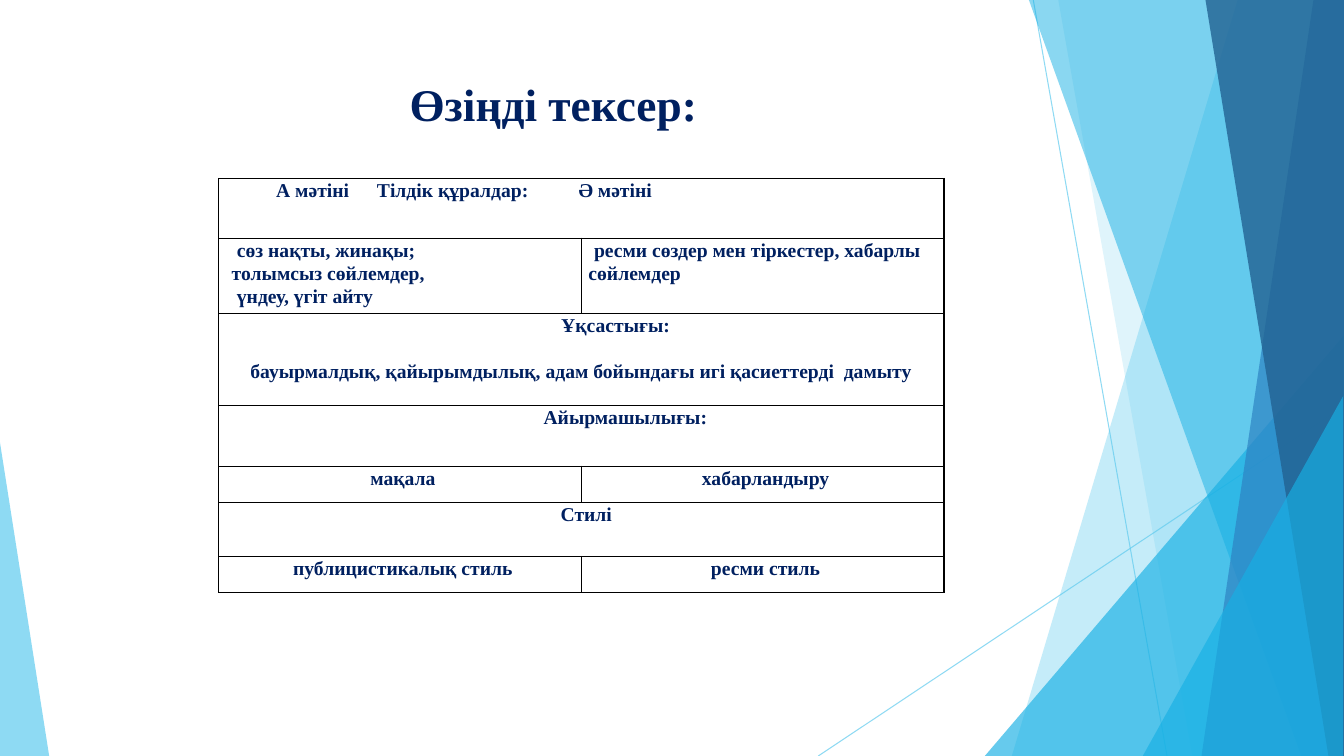
from dataclasses import dataclass
from typing import Any

import lxml.etree
import pptx
import pptx.dml.color
import pptx.enum.shapes
import pptx.enum.text
import pptx.oxml
import pptx.oxml.ns
import pptx.util

Cm = pptx.util.Cm
Pt = pptx.util.Pt
qn = pptx.oxml.ns.qn
ALIGN = pptx.enum.text.PP_ALIGN

COLORS = {
    "sky": "5FCBEF", "cyan": "17B0E4", "blue": "2E83C3", "deep": "226292",
    "navy": "002060", "black": "000000",
}
WIDTH, HEIGHT = 33.87, 19.05
FONT = {"name": "Times New Roman", "bold": True}
CELL_MARGINS = {
    "margin_left": Cm(0.18), "margin_right": Cm(0.18),
    "margin_top": 0, "margin_bottom": 0,
}
ROW_HEIGHTS = [1.5, 1.89, 2.33, 1.53, 0.91, 1.36, 0.91]
COLUMN_WIDTH = 9.14
HEADER_TABS = [1.88, 8.13, 15.16]


@dataclass
class Ray:
    start: tuple[float, float]
    end: tuple[float, float]


@dataclass
class Band:
    top_x: float
    bottom_x: float
    color: str
    opacity: int


@dataclass
class Wedge:
    left: float
    top: float
    width: float
    height: float
    apex: float
    color: str
    opacity: int


@dataclass
class Line:
    text: str
    margin: float = 0
    indent: float = 0
    centered: bool = True
    before: float = 0
    tabs: tuple[float, ...] = ()


RAYS = [Ray((26.04, 0), (29.41, HEIGHT)), Ray((33.86, 10.24), (20.62, HEIGHT))]
FACETS = [
    Band(31.19, 25.5, "sky", 36),
    Band(26.67, 30.05, "sky", 20),
    Wedge(24.82, 8.46, 9.04, 10.59, 1, "cyan", 66),
    Band(25.93, 32.79, "cyan", 50),
    Band(33.1, 30.28, "blue", 70),
    Band(30.38, 33.48, "deep", 80),
    Wedge(28.8, 9.98, 5.05, 9.07, 1, "cyan", 66),
    Wedge(0, 11.15, 1.24, 7.9, 0, "sky", 70),
]
ROWS = [
    [[Line("\tА мәтіні\tТілдік құралдар:\tӘ мәтіні", centered=False, tabs=tuple(HEADER_TABS))]],
    [
        [
            Line("сөз нақты, жинақы;", 0.28, centered=False),
            Line("толымсыз сөйлемдер,", 0.15, centered=False),
            Line("үндеу, үгіт айту", 0.28, centered=False),
        ],
        [Line("ресми сөздер мен тіркестер, хабарлы сөйлемдер", indent=0.14, centered=False)],
    ],
    [[
        Line("Ұқсастығы:", 1.73),
        Line("бауырмалдық, қайырымдылық, адам бойындағы игі қасиеттерді  дамыту", before=16.5),
    ]],
    [[Line("Айырмашылығы:", 2.22)]],
    [[Line("мақала", 0.15)], [Line("хабарландыру", 0.15)]],
    [[Line("Стилі", 0.25)]],
    [[Line("публицистикалық стиль", 0.15)], [Line("ресми стиль", 0.15)]],
]


def apply_formats(target: Any, formats: dict[str, Any]) -> None:
    for name, value in formats.items():
        setattr(target, name, value)


def rgb(color: str) -> pptx.dml.color.RGBColor:
    return pptx.dml.color.RGBColor.from_string(COLORS[color])


def set_opacity(element: Any, percent: int) -> None:
    color = next(element.iter(qn("a:srgbClr")))
    lxml.etree.SubElement(color, qn("a:alpha"), val=str(percent * 1000))


def draw_ray(page: Any, ray: Ray) -> None:
    line = page.shapes.add_connector(
        pptx.enum.shapes.MSO_CONNECTOR.STRAIGHT, *map(Cm, ray.start + ray.end)
    )
    line.line.color.rgb = rgb("sky")
    line.line.width = Pt(0.75)
    properties = line._element.spPr
    set_opacity(properties, 70)
    lxml.etree.SubElement(properties, qn("a:effectLst"))


def draw_facet(page: Any, facet: Band | Wedge) -> None:
    if isinstance(facet, Band):
        builder = page.shapes.build_freeform(Cm(facet.top_x), 0)
        corners = [(WIDTH, 0), (WIDTH, HEIGHT), (facet.bottom_x, HEIGHT)]
        builder.add_line_segments([(Cm(x), Cm(y)) for x, y in corners], close=True)
        shape = builder.convert_to_shape()
    else:
        shape = page.shapes.add_shape(
            pptx.enum.shapes.MSO_SHAPE.ISOSCELES_TRIANGLE,
            *map(Cm, (facet.left, facet.top, facet.width, facet.height)),
        )
        shape.adjustments[0] = facet.apex
    shape.shadow.inherit = False
    shape.fill.solid()
    shape.fill.fore_color.rgb = rgb(facet.color)
    set_opacity(shape._element.spPr, facet.opacity)
    shape.line.fill.background()


def write_span(para: Any, text: str, size: float) -> None:
    span = para.add_run()
    span.text = text
    apply_formats(span.font, FONT | {"size": Pt(size)})
    span.font.color.rgb = rgb("navy")


def write_line(para: Any, line: Line) -> None:
    apply_formats(para, {
        "alignment": ALIGN.CENTER if line.centered else ALIGN.LEFT,
        "line_spacing": 1.07,
        "space_before": Pt(line.before),
    })
    properties = para._p.get_or_add_pPr()
    properties.set("marL", str(Cm(line.margin)))
    properties.set("indent", str(Cm(line.indent)))
    if line.tabs:
        stops = lxml.etree.SubElement(properties, qn("a:tabLst"))
        for stop in line.tabs:
            lxml.etree.SubElement(stops, qn("a:tab"), pos=str(Cm(stop)), algn="l")
    write_span(para, line.text, 14)


def format_cell(cell: Any) -> None:
    apply_formats(cell, CELL_MARGINS)
    cell.fill.background()
    properties = cell._tc.get_or_add_tcPr()
    for index, side in enumerate(("lnL", "lnR", "lnT", "lnB")):
        border = properties.makeelement(qn(f"a:{side}"), {"w": str(Pt(1))})
        fill = lxml.etree.SubElement(border, qn("a:solidFill"))
        lxml.etree.SubElement(fill, qn("a:srgbClr"), val=COLORS["black"])
        properties.insert(index, border)


def draw_table(page: Any) -> None:
    frame = page.shapes.add_table(
        len(ROWS), 2, Cm(5.51), Cm(4.5), Cm(2 * COLUMN_WIDTH), Cm(sum(ROW_HEIGHTS))
    )
    table = frame.table
    apply_formats(table, {"first_row": False, "horz_banding": False})
    for column in table.columns:
        column.width = Cm(COLUMN_WIDTH)
    for index, (cells, height) in enumerate(zip(ROWS, ROW_HEIGHTS)):
        table.rows[index].height = Cm(height)
        for cell in table.rows[index].cells:
            format_cell(cell)
        if len(cells) == 1:
            table.cell(index, 0).merge(table.cell(index, 1))
        for column, lines in enumerate(cells):
            box = table.cell(index, column).text_frame
            for number, line in enumerate(lines):
                write_line(box.add_paragraph() if number else box.paragraphs[0], line)


def write_title(page: Any) -> None:
    title = page.shapes.title
    apply_formats(title, {
        "left": Cm(1.5), "top": Cm(1.7), "width": Cm(24.89), "height": Cm(2.79),
    })
    apply_formats(title.text_frame, {
        "margin_top": Cm(0.23),
        "word_wrap": True,
        "auto_size": pptx.enum.text.MSO_AUTO_SIZE.NONE,
        "vertical_anchor": pptx.enum.text.MSO_ANCHOR.TOP,
    })
    para = title.text_frame.paragraphs[0]
    apply_formats(para, {"alignment": ALIGN.CENTER, "space_before": Pt(0)})
    write_span(para, "Өзіңді тексер:", 32.4)


def main() -> None:
    deck = pptx.Presentation()
    apply_formats(deck, {"slide_width": Cm(WIDTH), "slide_height": Cm(HEIGHT)})
    page = deck.slides.add_slide(deck.slide_layouts[5])
    for ray in RAYS:
        draw_ray(page, ray)
    for facet in FACETS:
        draw_facet(page, facet)
    write_title(page)
    draw_table(page)
    deck.save("out.pptx")


if __name__ == "__main__":
    main()
